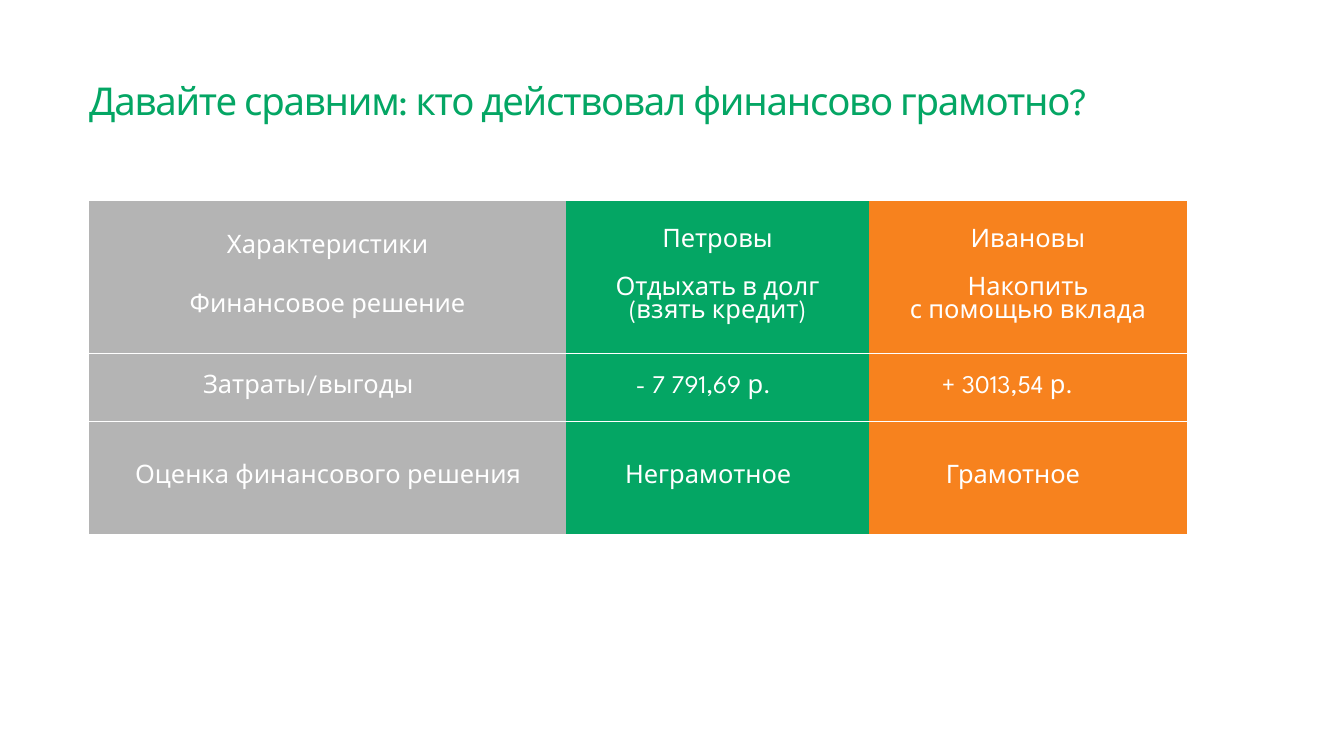
import pptx
import pptx.dml.color
import pptx.enum.text
import pptx.oxml
import pptx.oxml.ns
import pptx.util

EMU_PER_PX = 10000
FONT = "League Spartan"
GREEN, GREY, ORANGE, WHITE = "04A664", "B4B4B4", "F7821E", "FFFFFF"
NO_STYLE = "{2D5ABB26-0587-4C30-8999-92F81FD0307C}"

COLUMNS = [(477, GREY), (303, GREEN), (318, ORANGE)]
ROW_HEIGHTS = [152, 68, 113]
# Header cells: paragraphs as (text, space before in points, side margin in px)
HEADERS = [
    [("Характеристики", 0, 0), ("Финансовое решение", 27.8, 0)],
    [("Петровы", 0, 0), ("Отдыхать в долг (взять кредит)", 18.9, 40)],
    [("Ивановы", 0, 0), ("Накопить", 18.9, 0), ("с помощью вклада", 0, 0)],
]
# Body cells: (text, left indent in px)
BODY = [
    [("Затраты/выгоды", 114), ("- 7 791,69 р.", 70), ("+ 3013,54 р.", 73)],
    [("Оценка финансового решения", 46), ("Неграмотное", 59), ("Грамотное", 77)],
]


def px(value):
    return pptx.util.Emu(value * EMU_PER_PX)


def color(hex_string):
    return pptx.dml.color.RGBColor.from_string(hex_string)


def clear_margins(box):
    box.margin_left = box.margin_right = box.margin_top = box.margin_bottom = 0


def format_paragraph(paragraph, size, hex_string, left=0, right=0, centered=False):
    alignment = pptx.enum.text.PP_ALIGN
    paragraph.alignment = alignment.CENTER if centered else alignment.LEFT
    properties = paragraph._p.get_or_add_pPr()
    properties.set("marL", str(px(left)))
    properties.set("marR", str(px(right)))
    properties.set("indent", "0")
    paragraph.font.name = FONT
    paragraph.font.size = pptx.util.Pt(size)
    paragraph.font.color.rgb = color(hex_string)


def add_title(slide, text):
    title = slide.shapes.title
    title.left, title.top, title.width, title.height = px(87), px(77), px(1142), px(46)
    frame = title.text_frame
    clear_margins(frame)
    frame.word_wrap = True
    frame.vertical_anchor = pptx.enum.text.MSO_ANCHOR.TOP
    frame.auto_size = pptx.enum.text.MSO_AUTO_SIZE.SHAPE_TO_FIT_TEXT
    frame.text = text
    paragraph = frame.paragraphs[0]
    format_paragraph(paragraph, 30.2, GREEN, left=2)
    paragraph.space_before = pptx.util.Pt(0)
    paragraph.line_spacing = pptx.util.Pt(36.1)
    # Slightly tightened letters
    paragraph.runs[0].font._element.set("spc", "-100")


def add_rule(cell, side, position):
    line = pptx.oxml.parse_xml(
        f'<a:{side} {pptx.oxml.ns.nsdecls("a")} w="3175"><a:solidFill>'
        f'<a:srgbClr val="{WHITE}"/></a:solidFill></a:{side}>')
    cell._tc.get_or_add_tcPr().insert(position, line)


def style_cell(cell, fill, rule_above, rule_below):
    clear_margins(cell)
    cell.vertical_anchor = pptx.enum.text.MSO_ANCHOR.MIDDLE
    if rule_below:
        add_rule(cell, "lnB", 0)
    if rule_above:
        add_rule(cell, "lnT", 0)
    cell.fill.solid()
    cell.fill.fore_color.rgb = color(fill)


def fill_header(cell, lines):
    cell.text = "\n".join(text for text, _, _ in lines)
    for paragraph, (_, space, margin) in zip(cell.text_frame.paragraphs, lines):
        format_paragraph(paragraph, 20, WHITE, margin, margin, centered=True)
        if space:
            paragraph.space_before = pptx.util.Pt(space)


def fill_body(cell, text, indent):
    cell.text = text
    format_paragraph(cell.text_frame.paragraphs[0], 20, WHITE, left=indent)


def add_comparison(slide):
    width = sum(column_width for column_width, _ in COLUMNS)
    frame = slide.shapes.add_table(len(ROW_HEIGHTS), len(COLUMNS),
                                   px(89), px(201), px(width), px(sum(ROW_HEIGHTS)))
    table = frame.table
    table.first_row = table.horz_banding = False
    table._tbl.tblPr.find(pptx.oxml.ns.qn("a:tableStyleId")).text = NO_STYLE
    for row, height in zip(table.rows, ROW_HEIGHTS):
        row.height = px(height)
    last_row = len(ROW_HEIGHTS) - 1
    for column, (column_width, fill) in enumerate(COLUMNS):
        table.columns[column].width = px(column_width)
        for row in range(len(ROW_HEIGHTS)):
            cell = table.cell(row, column)
            style_cell(cell, fill, row > 0, row < last_row)
            if row == 0:
                fill_header(cell, HEADERS[column])
            else:
                fill_body(cell, *BODY[row - 1][column])


def main():
    presentation = pptx.Presentation()
    presentation.slide_width, presentation.slide_height = px(1344), px(756)
    slide = presentation.slides.add_slide(presentation.slide_layouts[5])
    add_title(slide, "Давайте сравним: кто действовал финансово грамотно?")
    add_comparison(slide)
    presentation.save("out.pptx")


if __name__ == "__main__":
    main()
